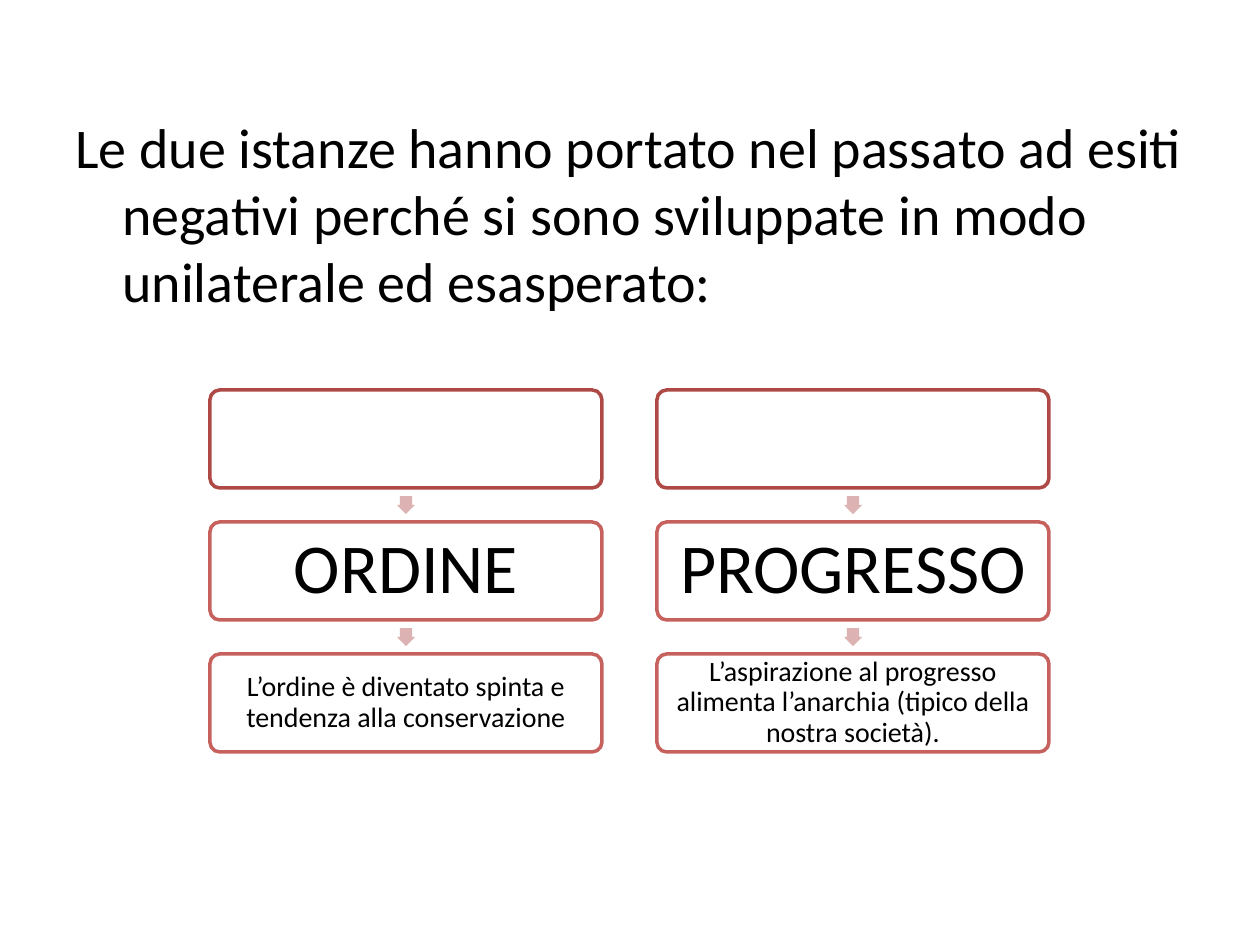
from lxml.etree import SubElement
from pptx import Presentation
from pptx.dml.color import RGBColor
from pptx.enum.shapes import MSO_SHAPE as Kind
from pptx.enum.text import MSO_ANCHOR as Anchor, PP_ALIGN as Align
from pptx.oxml.ns import qn
from pptx.util import Emu, Pt

INTRO = ("Le due istanze hanno portato nel passato ad esiti negativi "
         "perché si sono sviluppate in modo unilaterale ed esasperato:")
COLUMNS = [
    ["", "ORDINE",
     "L’ordine è diventato spinta e tendenza alla conservazione"],
    ["", "PROGRESSO",
     "L’aspirazione al progresso alimenta l’anarchia "
     "(tipico della nostra società)."],
]
SIZES = [40, 40, 16]
INSETS = [5, 5, 3]

WHITE = RGBColor(0xFF, 0xFF, 0xFF)
BLACK = RGBColor(0x00, 0x00, 0x00)
DARK = RGBColor(0xAE, 0x49, 0x46)
RED = RGBColor(0xC0, 0x50, 0x4D)
PINK = RGBColor(0xDC, 0xB3, 0xB2)

LEFT, TOP = 210, 390
WIDE, HIGH = 392, 98
STEP_X, STEP_Y = 447, 132
ARROW = 18


def px(n):
    return Emu(round(n * 914400 / 126))


def fade(shape):
    """Make the fill and line 90% opaque."""
    for node in shape._element.spPr.iter(qn("a:srgbClr")):
        SubElement(node, qn("a:alpha")).set("val", "90000")


def write(para, text, size):
    run = para.add_run()
    run.text = text
    run.font.size = Pt(size)
    run.font.name = "Calibri"
    run.font.color.rgb = BLACK


def add_shape(kind, x, y, w, h, color):
    shape = slide.shapes.add_shape(kind, px(x), px(y), px(w), px(h))
    shape.shadow.inherit = False
    shape.fill.solid()
    shape.fill.fore_color.rgb = color
    return shape


def add_intro():
    box = slide.shapes.add_textbox(px(63), px(106), px(1134), px(738))
    box.fill.solid()
    box.fill.fore_color.rgb = WHITE
    box.text_frame.word_wrap = True
    para = box.text_frame.paragraphs[0]
    props = para._p.get_or_add_pPr()
    props.set("marL", str(px(47)))
    props.set("indent", str(-px(47)))
    write(para, INTRO, 32)


def add_box(x, y, text, size, inset, line):
    box = add_shape(Kind.ROUNDED_RECTANGLE, x, y, WIDE, HIGH, WHITE)
    box.adjustments[0] = 0.1
    box.line.color.rgb = line
    box.line.width = Pt(2)
    if not text:
        return
    fade(box)
    frame = box.text_frame
    frame.word_wrap = True
    frame.vertical_anchor = Anchor.MIDDLE
    frame.margin_left = frame.margin_right = px(inset)
    frame.margin_top = frame.margin_bottom = px(inset)
    para = frame.paragraphs[0]
    para.alignment = Align.CENTER
    para.line_spacing = 0.9
    write(para, text, size)


def add_arrow(x, y):
    arrow = add_shape(Kind.DOWN_ARROW, x, y, ARROW, ARROW, PINK)
    arrow.adjustments[0] = 0.67
    arrow.line.fill.background()


deck = Presentation()
deck.slide_width, deck.slide_height = px(1260), px(945)
slide = deck.slides.add_slide(deck.slide_layouts[6])

add_intro()
for col, texts in enumerate(COLUMNS):
    x = LEFT + col * STEP_X
    for row, (text, size, inset) in enumerate(zip(texts, SIZES, INSETS)):
        y = TOP + row * STEP_Y
        if row:
            gap = STEP_Y - HIGH
            add_arrow(x + (WIDE - ARROW) / 2, y - (gap + ARROW) / 2)
        add_box(x, y, text, size, inset, RED if row else DARK)

deck.save("out.pptx")
